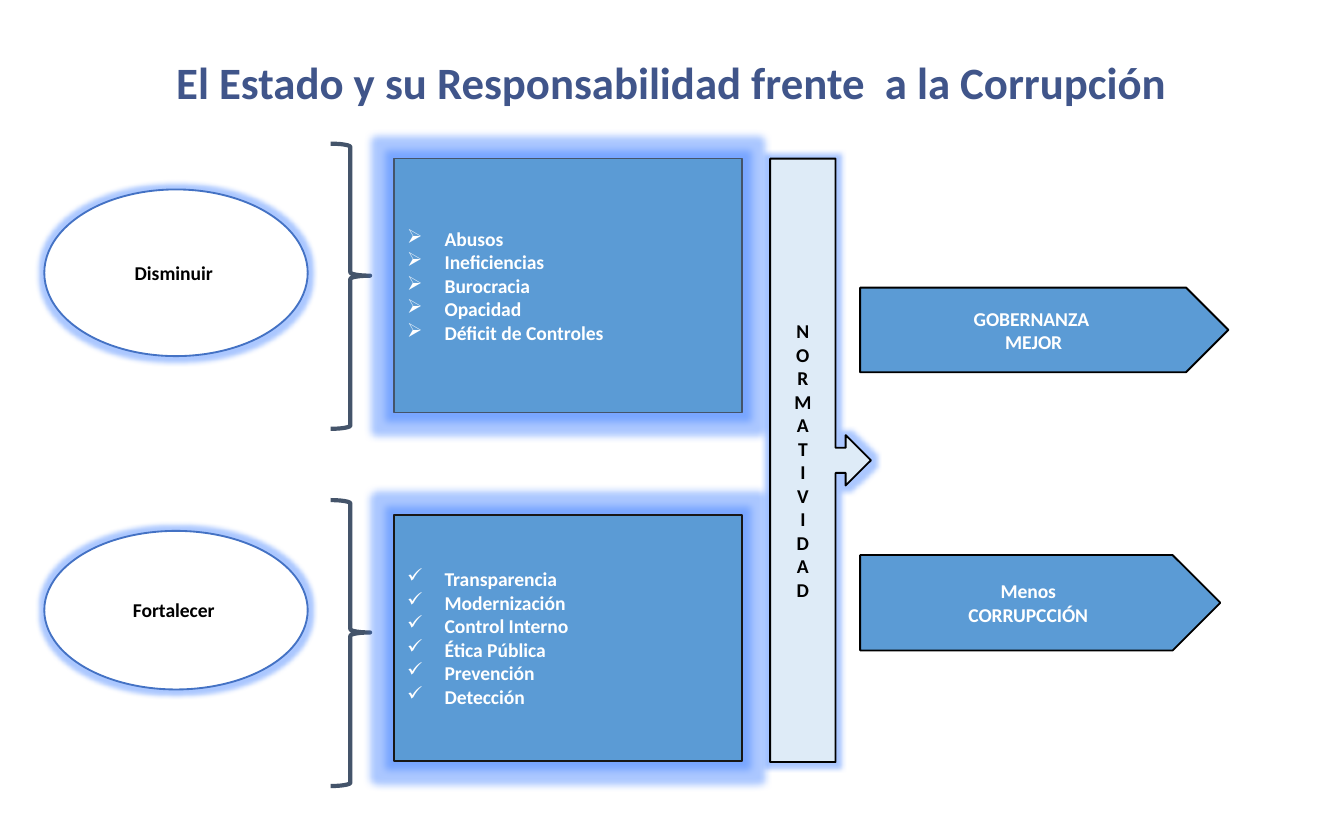
from dataclasses import dataclass

from lxml import etree
from pptx import Presentation
from pptx import util as u
from pptx.dml.color import RGBColor
from pptx.enum import shapes, text
from pptx.oxml.ns import qn

Pt = u.Pt
Kind = shapes.MSO_SHAPE


@dataclass(frozen=True)
class Theme:
    font: str = "Calibri"
    title_size: float = 24
    body_size: float = 10.5
    title: str = "40558A"
    white: str = "FFFFFF"
    black: str = "000000"
    blue: str = "5B9BD5"
    pale: str = "DEEBF7"
    ring: str = "4472C4"
    slate: str = "44546A"
    dark: str = "181717"
    glow: str = "2E75FF"


@dataclass(frozen=True)
class Box:
    left: float
    top: float
    width: float
    height: float

    def inner(self, left, top, width, height):
        """Box placed relative to this one."""
        return Box(self.left + left, self.top + top, width, height)

    def lengths(self):
        return [Pt(v) for v in (self.left, self.top, self.width, self.height)]


THEME = Theme()


def add_bullet(para, mark, indent=20.16):
    properties = para._p.get_or_add_pPr()
    properties.set("marL", str(Pt(indent)))
    properties.set("indent", str(-Pt(indent)))
    etree.SubElement(properties, qn("a:buChar")).set("char", mark)


def add_glow(shape, radius):
    effects = shape._element.spPr.find(qn("a:effectLst"))
    glow = etree.SubElement(effects, qn("a:glow"), rad=str(Pt(radius)))
    color = etree.SubElement(glow, qn("a:srgbClr"), val=THEME.glow)
    etree.SubElement(color, qn("a:alpha"), val="40000")


def write_lines(shape, lines, color, size=THEME.body_size, bullet=None):
    frame = shape.text_frame
    frame.word_wrap = True
    frame.vertical_anchor = text.MSO_ANCHOR.MIDDLE
    for index, line in enumerate(lines):
        para = frame.add_paragraph() if index else frame.paragraphs[0]
        if bullet:
            add_bullet(para, bullet)
        para.alignment = text.PP_ALIGN.LEFT if bullet else text.PP_ALIGN.CENTER
        span = para.add_run()
        span.text = line
        span.font.name = THEME.font
        span.font.size = Pt(size)
        span.font.bold = True
        span.font.color.rgb = RGBColor.from_string(color)


def add_figure(page, kind, box, fill, line, weight=1, glow=0):
    shape = page.shapes.add_shape(kind, *box.lengths())
    shape.shadow.inherit = False
    if fill:
        shape.fill.solid()
        shape.fill.fore_color.rgb = RGBColor.from_string(fill)
    else:
        shape.fill.background()
    shape.line.color.rgb = RGBColor.from_string(line)
    shape.line.width = Pt(weight)
    if glow:
        add_glow(shape, glow)
    return shape


def place_title(page, box, words):
    title = page.shapes.title
    title.left, title.top, title.width, title.height = box.lengths()
    write_lines(title, [words], THEME.title, THEME.title_size)
    title.text_frame.auto_size = text.MSO_AUTO_SIZE.NONE


def place_goal(page, box, goal, oval_top, oval_height, items, mark, panel_height, edge):
    """Oval with the goal, brace, and panel listing its targets."""
    oval = add_figure(page, Kind.OVAL, box.inner(0, oval_top, 141.12, oval_height),
                      THEME.white, THEME.ring, glow=5)
    write_lines(oval, [goal], THEME.black)

    brace = add_figure(page, Kind.RIGHT_BRACE, box.inner(153.36, 0, 21.2, box.height),
                       None, THEME.slate, weight=2.25)
    brace.adjustments[0], brace.adjustments[1] = 0.083, 0.463

    panel = add_figure(page, Kind.RECTANGLE, box.inner(187.2, 7.92, 186.48, panel_height),
                       THEME.blue, edge, glow=8)
    write_lines(panel, items, THEME.white, bullet=mark)


def place_rules(page, box, word):
    """Tall callout with one letter on each line."""
    callout = add_figure(page, Kind.RIGHT_ARROW_CALLOUT, box, THEME.pale, THEME.black, glow=5)
    write_lines(callout, word, THEME.black)


def place_result(page, box, lines):
    write_lines(add_figure(page, Kind.PENTAGON, box, THEME.blue, THEME.black),
                lines, THEME.white)


def main():
    deck = Presentation()
    deck.slide_width, deck.slide_height = Pt(720), Pt(450)
    page = deck.slides.add_slide(deck.slide_layouts[5])

    place_title(page, Box(23.76, 25.2, 671.76, 36.72),
                "El Estado y su Responsabilidad frente  a la Corrupción")

    # Goals on the left
    place_goal(page, Box(23.76, 77, 373.68, 152.8), "Disminuir ", 24.5, 89.28,
               ["Abusos", "Ineficiencias", "Burocracia", "Opacidad", "Déficit de Controles"],
               "➢", 136.1, THEME.slate)
    place_goal(page, Box(23.76, 267.9, 373.68, 153.2), "Fortalecer ", 16.5, 84.96,
               ["Transparencia", "Modernización", "Control Interno", "Ética Pública",
                "Prevención", "Detección"],
               "✓", 131.8, THEME.dark)

    # Rules in the middle, results on the right
    place_rules(page, Box(412.56, 84.96, 54, 323.28), "NORMATIVIDAD")
    place_result(page, Box(460.8, 154.08, 197.28, 45.36), ["GOBERNANZA ", "MEJOR"])
    place_result(page, Box(460.8, 297.36, 192.96, 51.12), ["Menos", "CORRUPCCIÓN"])

    deck.save("out.pptx")


if __name__ == "__main__":
    main()
